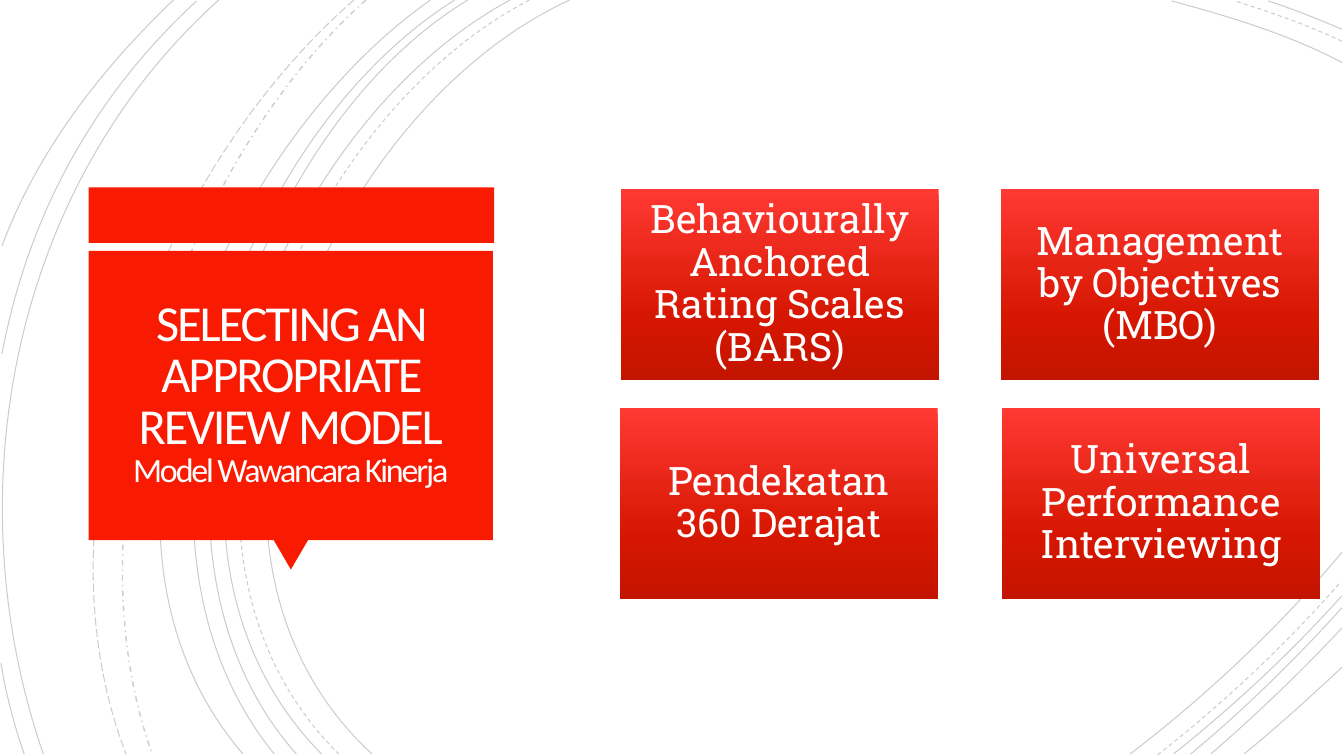
import copy

import pptx
import pptx.dml.color
import pptx.enum.dml
import pptx.enum.shapes
import pptx.enum.text
import pptx.oxml.ns
import pptx.util
from lxml import etree

Inches = pptx.util.Inches
MSO_SHAPE = pptx.enum.shapes.MSO_SHAPE
DASHES = pptx.enum.dml.MSO_LINE
qn = pptx.oxml.ns.qn

# Content
HEADING = "SELECTING AN APPROPRIATE REVIEW MODEL"
SUBHEADING = "Model Wawancara Kinerja"
# Each row: top, left, column pitch (inches), review models
REVIEW_ROWS = [
    (1.88, 6.16, 3.77, ["Behaviourally Anchored Rating Scales (BARS)",
                        "Management by Objectives (MBO)"]),
    (4.05, 6.15, 3.79, ["Pendekatan 360 Derajat",
                        "Universal Performance Interviewing"]),
]

# Background arcs: start, two Bezier controls, end (inches)
SOLID_ARCS = [
    [(5.65, 0), (3.15, 1.15), (1.43, 5.4), (3.69, 7.48)],
    [(13.31, 0.62), (12.78, 0.34), (12.18, 0.16), (11.62, 0.01)],
    [(11.21, 7.48), (11.97, 6.9), (12.69, 6.22), (13.31, 5.48)],
    [(5.06, 0), (2.7, 1.27), (1.1, 5.37), (3.19, 7.48)],
    [(13.31, 0.29), (13.07, 0.19), (12.83, 0.09), (12.58, 0.01)],
    [(11.64, 7.48), (12.23, 7.01), (12.8, 6.48), (13.31, 5.91)],
    [(4.64, 0), (2.44, 1.33), (1.1, 5.41), (2.94, 7.48)],
    [(11.81, 7.48), (12.34, 7.04), (12.84, 6.55), (13.31, 6.03)],
    [(4.51, 0), (2.31, 1.38), (0.97, 5.33), (2.72, 7.48)],
    [(12.01, 7.48), (12.46, 7.09), (12.9, 6.67), (13.31, 6.23)],
    [(4.27, 0), (2.17, 1.47), (0.53, 5.29), (2.41, 7.48)],
    [(12.34, 7.48), (12.67, 7.21), (12.99, 6.92), (13.31, 6.62)],
    [(2.17, 0), (0.11, 1.85), (-0.46, 4.9), (0.43, 7.48)],
    [(1.95, 0.01), (0.92, 0.96), (0.28, 2.14), (0.02, 3.51)],
    [(0.01, 6.58), (0.06, 6.89), (0.14, 7.19), (0.24, 7.48)],
    [(1.72, 0), (1, 0.69), (0.37, 1.5), (0.02, 2.44)],
]
DASHED_ARCS = [
    [(5.25, 0), (2.85, 1.25), (1.23, 5.37), (3.36, 7.48)],
    [(13.31, 0.41), (12.97, 0.25), (12.6, 0.12), (12.25, 0.01)],
    [(11.48, 7.49), (12.13, 6.98), (12.75, 6.4), (13.3, 5.77)],
]
DASH_DOT_ARCS = [[(3.63, 0), (1.76, 1.66), (0.65, 5.09), (1.51, 7.48)]]
LONG_DASH_ARCS = [[(3.51, 0), (1.57, 1.69), (0.29, 4.99), (1.25, 7.48)]]
ARC_STYLES = [
    (SOLID_ARCS, DASHES.SOLID, 0.75),
    (DASHED_ARCS, DASHES.DASH, 0.75),
    (DASH_DOT_ARCS, DASHES.DASH_DOT, 1),
    (LONG_DASH_ARCS, DASHES.LONG_DASH, 0.75),
]

# Look
RED, WHITE, TITLE_WHITE, BLACK = "F81B02", "FFFFFF", "FFFEFF", "000000"
CARD_GRADIENT = [(0, "FF3933"), (0.69, "D51600"), (1, "C31400")]
CARD_WIDTH, CARD_HEIGHT = 3.15, 1.89


def rgb(value):
    return pptx.dml.color.RGBColor.from_string(value)


def add_block(kind, left, top, width, height, fill=RED):
    block = slide.shapes.add_shape(
        kind, Inches(left), Inches(top), Inches(width), Inches(height))
    block.shadow.inherit = False
    block.line.fill.background()
    block.fill.solid()
    block.fill.fore_color.rgb = rgb(fill)
    return block


def add_text(paragraph, text, size, font, color, tracking=0):
    run = paragraph.add_run()
    run.text = text
    run.font.size = pptx.util.Pt(size)
    run.font.name = font
    run.font.color.rgb = rgb(color)
    if tracking:
        run.font._element.set("spc", str(round(tracking * 100)))


def centred_paragraph(block, inset, line_spacing):
    frame = block.text_frame
    frame.word_wrap = True
    frame.vertical_anchor = pptx.enum.text.MSO_ANCHOR.MIDDLE
    frame.margin_left = frame.margin_right = Inches(inset)
    frame.margin_top = frame.margin_bottom = Inches(inset)
    paragraph = frame.paragraphs[0]
    paragraph.alignment = pptx.enum.text.PP_ALIGN.CENTER
    paragraph.line_spacing = line_spacing
    return paragraph


def add_arc(controls, dash, width):
    start, *rest = [(Inches(x), Inches(y)) for x, y in controls]
    builder = slide.shapes.build_freeform(*start)
    builder.add_line_segments(rest, close=False)
    arc = builder.convert_to_shape()
    # Turn the three segments into one cubic curve
    segments = list(arc.element.spPr.iter(qn("a:lnTo")))
    curve = etree.SubElement(segments[0].getparent(), qn("a:cubicBezTo"))
    for segment in segments:
        curve.append(segment[0])
        segment.getparent().remove(segment)
    arc.shadow.inherit = False
    arc.fill.background()
    arc.line.width = pptx.util.Pt(width)
    arc.line.color.rgb = rgb(BLACK)
    arc.line.dash_style = dash
    line_color = arc.element.spPr.find(".//" + qn("a:srgbClr"))
    etree.SubElement(line_color, qn("a:alpha")).set("val", "20000")


def apply_gradient(block, stops):
    block.fill.gradient()
    block.fill.gradient_angle = 270
    stop_list = block.element.spPr.find(".//" + qn("a:gsLst"))
    stop_list.append(copy.deepcopy(stop_list[0]))
    for stop, (position, color) in zip(block.fill.gradient_stops, stops):
        stop.position = position
        stop.color.rgb = rgb(color)


presentation = pptx.Presentation()
presentation.slide_width = Inches(13.33)
presentation.slide_height = Inches(7.5)
slide = presentation.slides.add_slide(presentation.slide_layouts[6])

# Background arcs
for arcs, dash, width in ARC_STYLES:
    for controls in arcs:
        add_arc(controls, dash, width)

# Title callout
add_block(MSO_SHAPE.RECTANGLE, 0.88, 1.86, 4.02, 0.55)
pointer = add_block(MSO_SHAPE.ISOSCELES_TRIANGLE, 2.71, 5.35, 0.35, 0.3)
pointer.rotation = 180
add_block(MSO_SHAPE.RECTANGLE, 0.88, 2.49, 4.01, 2.87)
title_box = slide.shapes.add_textbox(Inches(0.97), Inches(2.57), Inches(3.83), Inches(2.69))
title = centred_paragraph(title_box, 0.25, 0.85)
add_text(title, HEADING, size=36, font="Calibri", color=TITLE_WHITE, tracking=-1.5)
title.add_line_break()
add_text(title, SUBHEADING, size=24.3, font="Calibri", color=TITLE_WHITE, tracking=-1.5)

# Review model cards
for top, left, pitch, models in REVIEW_ROWS:
    for column, model in enumerate(models):
        card = add_block(MSO_SHAPE.RECTANGLE, left + column * pitch, top,
                         CARD_WIDTH, CARD_HEIGHT)
        apply_gradient(card, CARD_GRADIENT)
        add_text(centred_paragraph(card, 0.12, 0.9), model,
                 size=28, font="Roboto Slab", color=WHITE)

presentation.save("out.pptx")
